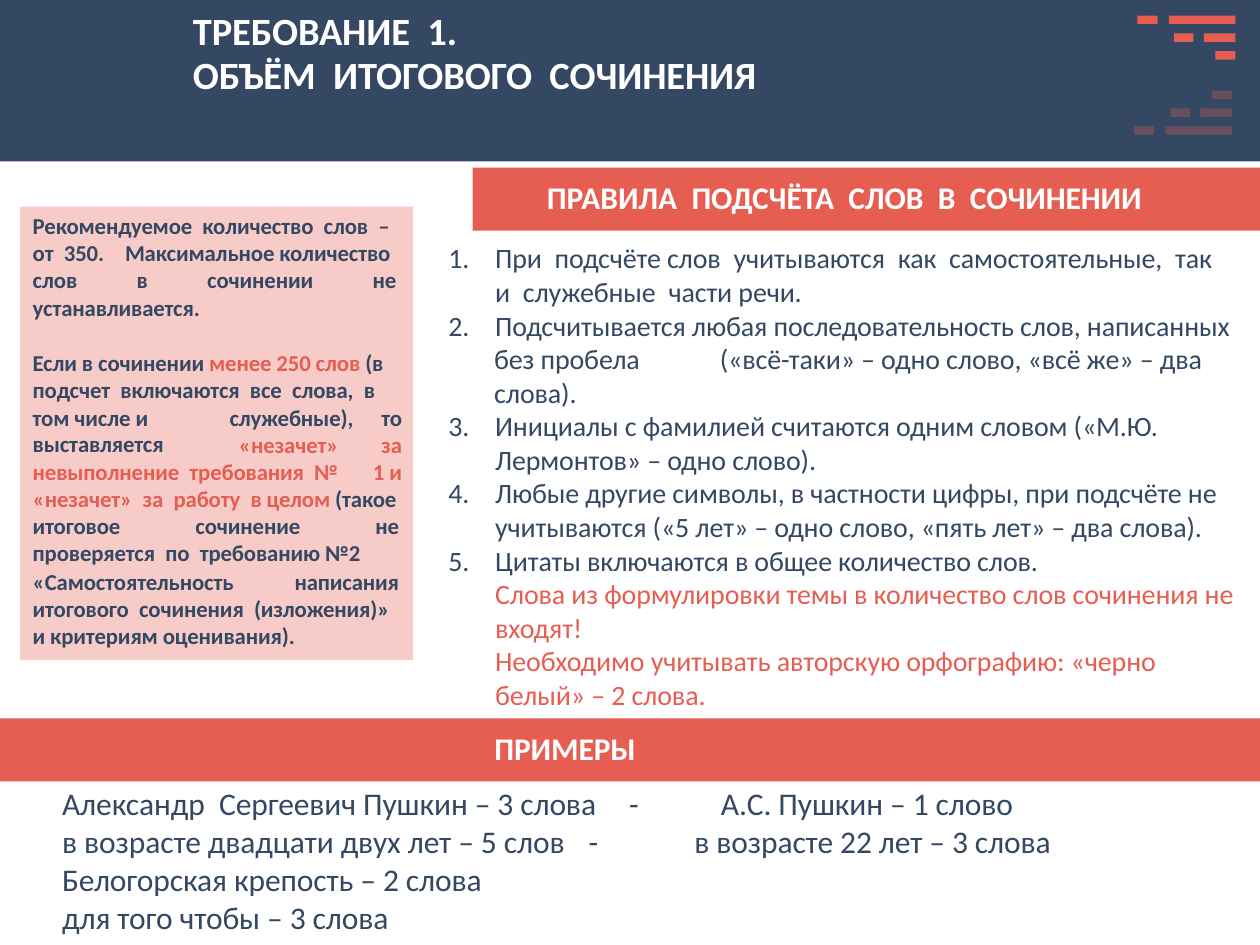
from dataclasses import dataclass

from lxml import etree
from pptx import Presentation
from pptx.dml.color import RGBColor
from pptx.enum.shapes import MSO_SHAPE
from pptx.enum.text import PP_ALIGN
from pptx.oxml.ns import qn
from pptx.util import Pt

RECTANGLE = MSO_SHAPE.RECTANGLE
LEFT, RIGHT = PP_ALIGN.LEFT, PP_ALIGN.RIGHT
NAVY, CORAL, PINK, WHITE = "344863", "E65E52", "F7CCC8", "FFFFFF"
FONT = "Calibri"
WIDE_SPACE = 0.226
TIGHT = -0.05
DASHES = [(0, 11.5, 0), (18, 38, 0), (21, 11, 1), (38, 18, 1), (44.5, 11.5, 2)]
DASH_HEIGHT, DASH_PITCH = 4.8, 10.2


@dataclass
class Para:
    text: str
    before: float = 0
    margin: float = 0
    number: int = 0
    gap: float = 0
    align: int = LEFT
    leading: float = 0


def color(value):
    return RGBColor.from_string(value)


def paint(shape, fill):
    shape.shadow.inherit = False
    shape.fill.solid()
    shape.fill.fore_color.rgb = color(fill)
    shape.line.fill.background()


def add_band(slide, left, top, width, height, fill):
    band = slide.shapes.add_shape(RECTANGLE, Pt(left), Pt(top), Pt(width), Pt(height))
    paint(band, fill)


def add_run(paragraph, text, spacing, accent):
    run = paragraph.add_run()
    run.text = text
    run.font._element.set("spc", str(round(spacing * 100)))
    if accent:
        run.font.color.rgb = color(CORAL)


def add_line(paragraph, line, size, gap, accent):
    for column, cell in enumerate(line.split("^")):
        if column:
            add_run(paragraph, " ", gap, accent)
        for index, words in enumerate(cell.split("~")):
            if index:
                add_run(paragraph, " ", size * WIDE_SPACE, accent)
            if words:
                add_run(paragraph, words, TIGHT, accent)


def fill_paragraph(paragraph, para, size, ink, bold):
    paragraph.alignment = para.align
    paragraph.space_before = Pt(para.before)
    if para.leading:
        paragraph.line_spacing = Pt(para.leading)
    props = paragraph._p.get_or_add_pPr()
    props.set("marL", str(Pt(para.margin)))
    props.set("indent", str(Pt(-26.8 if para.number else 0)))
    if para.number:
        etree.SubElement(props, qn("a:buAutoNum"), type="arabicPeriod",
                         startAt=str(para.number))
    paragraph.font.name = FONT
    paragraph.font.size = Pt(size)
    paragraph.font.bold = bold
    paragraph.font.color.rgb = color(ink)
    for part, piece in enumerate(para.text.split("|")):
        for row, line in enumerate(piece.split("\n")):
            if row:
                paragraph.add_line_break()
            add_line(paragraph, line, size, para.gap, part % 2)


def add_text(slide, left, top, width, height, paras, size, ink=NAVY, bold=False):
    frame = slide.shapes.add_textbox(Pt(left), Pt(top), Pt(width), Pt(height)).text_frame
    frame.word_wrap = True
    frame.margin_left = frame.margin_right = frame.margin_bottom = 0
    frame.margin_top = Pt(0.9)
    for index, para in enumerate(paras):
        paragraph = frame.add_paragraph() if index else frame.paragraphs[0]
        fill_paragraph(paragraph, para, size, ink, bold)


def add_dashes(slide, left, top, flipped=False):
    outline = None
    for x, width, row in DASHES:
        y = (2 - row if flipped else row) * DASH_PITCH
        corners = [(Pt(left + dx), Pt(top + dy)) for dx, dy in
                   [(x, y), (x + width, y), (x + width, y + DASH_HEIGHT), (x, y + DASH_HEIGHT)]]
        if outline is None:
            outline = slide.shapes.build_freeform(*corners[0])
        else:
            outline.move_to(*corners[0])
        outline.add_line_segments(corners[1:], close=True)
    dashes = outline.convert_to_shape()
    paint(dashes, CORAL)
    if flipped:
        tint = dashes._element.spPr.find(qn("a:solidFill"))[0]
        etree.SubElement(tint, qn("a:alpha"), val="30000")


def add_title(slide, left, top, width, height):
    add_band(slide, left, top, width, height, NAVY)
    add_text(slide, left + 110.3, top + 4.3, 330, 52.6, [
        Para("ТРЕБОВАНИЕ~1.", 1.1, leading=25.1),
        Para("ОБЪЁМ~ИТОГОВОГО~СОЧИНЕНИЯ", leading=25.1),
    ], 22, WHITE, True)
    add_dashes(slide, left + 650, top + 8.9)
    add_dashes(slide, left + 648, top + 51.8, flipped=True)


def add_heading(slide, left, top, width, height, heading, inset, heading_width):
    add_band(slide, left, top, width, height, CORAL)
    add_text(slide, left + inset, top + 5, heading_width, 23.8,
             [Para(heading, 1)], 18, WHITE, True)


def add_rules(slide, left, top, width):
    hang = 28.1
    add_text(slide, left, top, width, 59.8, [
        Para("При~подсчёте слов~учитываются~как~самостоятельные,~так", 1.1, hang, 1),
        Para("и~служебные~части речи.", 0, hang),
        Para("Подсчитывается любая последовательность слов, написанных", 0.1, hang, 2),
    ], 16)
    add_text(slide, left + 26.6, top + 57.6, width - 44, 40.3, [
        Para("без пробела^(«всё-таки» – одно слово, «всё же» – два\nслова).",
             1.1, 0.9, gap=42),
    ], 16)
    add_text(slide, left, top + 95.8, width + 3, 175, [
        Para("Инициалы с фамилией считаются одним словом («М.Ю.", 1.1, hang, 3),
        Para("Лермонтов» – одно слово).", 0, hang),
        Para("Любые другие символы, в частности цифры, при подсчёте не\n"
             "учитываются («5 лет» – одно слово, «пять лет» – два слова).", 0.1, hang, 4),
        Para("Цитаты включаются в общее количество слов.", 0, hang, 5),
        Para("|Слова из формулировки темы в количество слов сочинения не\nвходят!|", 0, hang),
        Para("|Необходимо учитывать авторскую орфографию: «черно|", 0, hang),
        Para("|белый» – 2 слова.|", 0.1, hang),
    ], 16)


def add_word_count(slide, left, top, width, height):
    add_band(slide, left, top, width, height, PINK)
    inner = width - 12
    blocks = [
        (0, 2.2, inner, 17.3, [Para("Рекомендуемое~количество~слов~–", 0.9)]),
        (0, 17.3, inner, 33, [
            Para("от~350.^Максимальное количество", 0.9, gap=9),
            Para("слов^в^сочинении^не", gap=31)]),
        (0, 49, inner, 80, [
            Para("устанавливается.", 0.9),
            Para("Если в сочинении |менее 250 слов| (в\nподсчет~включаются~все~слова,~в\n"
                 "том числе и", 15.7)]),
        (0, 126.7, 77, 17.3, [Para("выставляется", 0.9)]),
        (0, 142.6, 183, 17.3, [Para("|невыполнение~требования~№|", 0.9)]),
        (108, 111.6, 103, 49, [
            Para("служебные),^то", 0.9, gap=13, align=RIGHT),
            Para("|«незачет»^за|", gap=21.5, align=RIGHT),
            Para("|1 и|", align=RIGHT)]),
        (0, 157.7, inner, 49, [
            Para("|«незачет»~за~работу~в целом| (такое", 0.9),
            Para("итоговое^сочинение^не", gap=40),
            Para("проверяется~по~требованию №2")]),
        (0, 205.2, inner, 49, [
            Para("«Самостоятельность^написания\nитогового~сочинения~(изложения)»\n"
                 "и критериям оценивания).", 0.9, gap=32)]),
    ]
    for x, y, block_width, block_height, paras in blocks:
        add_text(slide, left + 7.2 + x, top + y, block_width, block_height, paras, 13, bold=True)


def add_examples(slide, left, top, width):
    column = 324
    add_text(slide, left, top, 310, 23.8,
             [Para("Александр~Сергеевич Пушкин – 3 слова", 1, 0.9)], 18)
    add_text(slide, left + column, top, width - column, 45.4, [
        Para("-^А.С. Пушкин – 1 слово", 1, 0.9, gap=42.8),
        Para("в возрасте 22 лет – 3 слова", 0, 38.2),
    ], 18)
    add_text(slide, left, top + 21.6, 314, 67, [
        Para("в возрасте двадцати двух лет – 5 слов^-", 1, 0.9, gap=9.6),
        Para("Белогорская крепость – 2 слова\nдля того чтобы – 3 слова", 0.1, 0.9),
    ], 18)


def main():
    deck = Presentation()
    deck.slide_width, deck.slide_height = Pt(720), Pt(540)
    slide = deck.slides.add_slide(deck.slide_layouts[6])
    add_title(slide, 0, 0, 720, 92.2)
    add_heading(slide, 270, 95.8, 450, 36, "ПРАВИЛА~ПОДСЧЁТА~СЛОВ~В~СОЧИНЕНИИ", 42.5, 348)
    add_rules(slide, 254.9, 136.8, 454)
    add_heading(slide, 0, 410.6, 720, 36, "ПРИМЕРЫ", 282.5, 84)
    add_examples(slide, 34.6, 447.1, 568.8)
    add_word_count(slide, 11.5, 118.1, 224.6, 259.2)
    deck.save("out.pptx")


if __name__ == "__main__":
    main()
